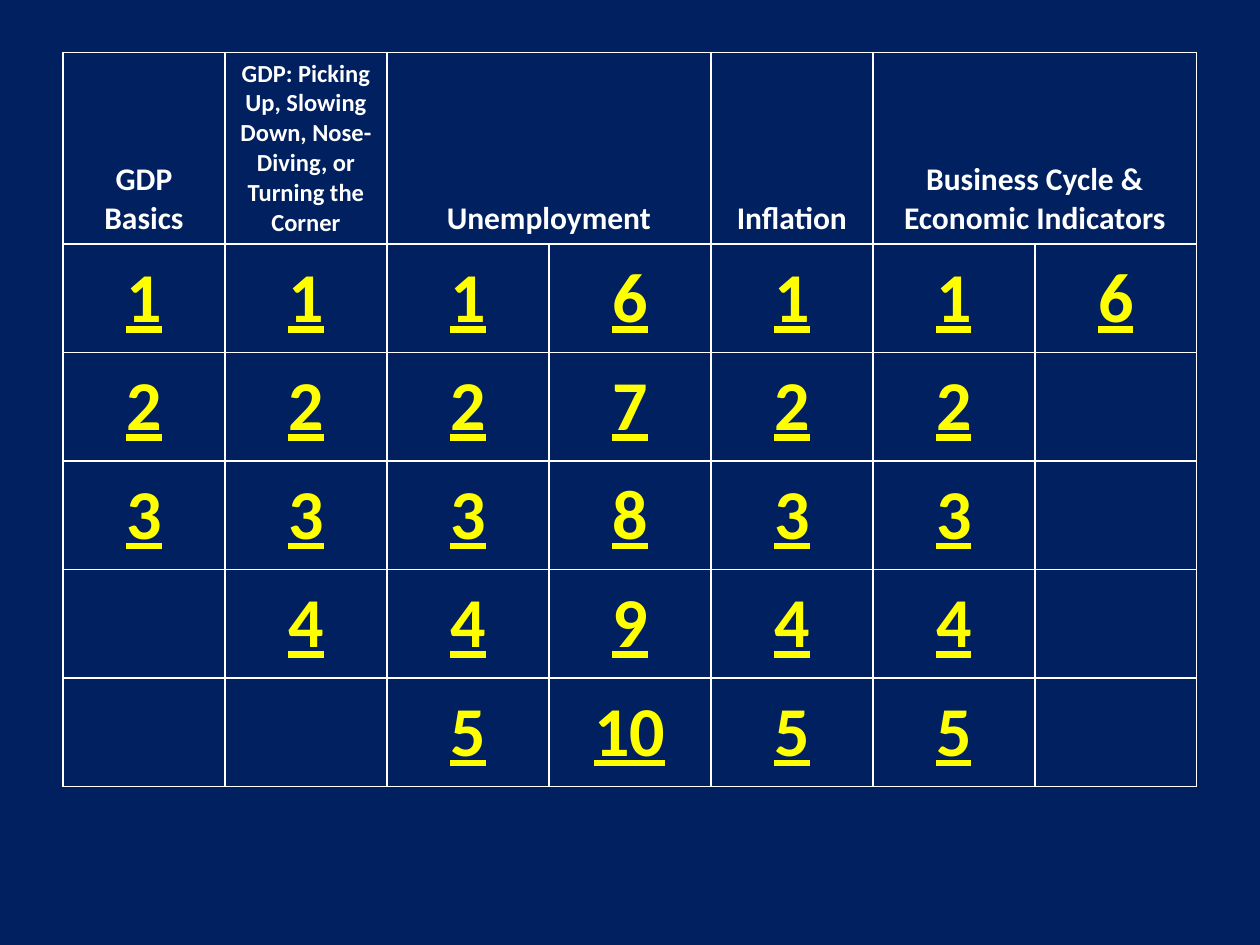
from lxml import etree
from pptx import Presentation
from pptx.dml.color import RGBColor
from pptx.enum import text
from pptx.oxml.ns import qn
from pptx.util import Pt

COLORS = {"navy": "002060", "white": "FFFFFF", "yellow": "FFFF00"}
FONT = "Calibri"

# heading, heading size, question numbers in each of its columns
CATEGORIES = [
    ("GDP Basics", 18, [range(1, 4)]),
    ("GDP: Picking Up, Slowing Down, Nose-Diving, or Turning the Corner", 14,
     [range(1, 5)]),
    ("Unemployment", 18, [range(1, 6), range(6, 11)]),
    ("Inflation", 18, [range(1, 6)]),
    ("Business Cycle & Economic Indicators", 18, [range(1, 6), range(6, 7)]),
]

LEFT, TOP, WIDTH = 36, 30, 648
HEADING_HEIGHT, QUESTION_HEIGHT = 96, 62
QUESTION_ROWS = 5
COLUMNS = sum(len(columns) for _, _, columns in CATEGORIES)


def write(cell, words, size, color, anchor, underline=None):
    cell.vertical_anchor = anchor
    paragraph = cell.text_frame.paragraphs[0]
    paragraph.text = words
    paragraph.alignment = text.PP_ALIGN.CENTER
    font = paragraph.font
    font.name, font.size, font.bold = FONT, Pt(size), True
    font.color.rgb = RGBColor.from_string(COLORS[color])
    if underline:
        paragraph.runs[0].font.underline = True


def outline(cell):
    """Give the cell white borders on all sides and no fill."""
    properties = cell._tc.get_or_add_tcPr()
    for side in ("a:lnL", "a:lnR", "a:lnT", "a:lnB"):
        line = etree.SubElement(properties, qn(side), w=str(Pt(1)))
        fill = etree.SubElement(line, qn("a:solidFill"))
        etree.SubElement(fill, qn("a:srgbClr"), val=COLORS["white"])
    cell.fill.background()


prs = Presentation()
prs.slide_width, prs.slide_height = Pt(720), Pt(540)
slide = prs.slides.add_slide(prs.slide_layouts[6])
slide.background.fill.solid()
slide.background.fill.fore_color.rgb = RGBColor.from_string(COLORS["navy"])

heights = [HEADING_HEIGHT] + [QUESTION_HEIGHT] * QUESTION_ROWS
board = slide.shapes.add_table(len(heights), COLUMNS, Pt(LEFT), Pt(TOP),
                               Pt(WIDTH), Pt(sum(heights))).table
board.first_row = board.horz_banding = False
for row, height in zip(board.rows, heights):
    row.height = Pt(height)
for cell in board.iter_cells():
    outline(cell)

column = 0
for heading, size, question_columns in CATEGORIES:
    top_cell = board.cell(0, column)
    if len(question_columns) > 1:
        top_cell.merge(board.cell(0, column + len(question_columns) - 1))
    write(top_cell, heading, size, "white", text.MSO_ANCHOR.BOTTOM)
    for questions in question_columns:
        for row, number in enumerate(questions, start=1):
            write(board.cell(row, column), str(number), 40, "yellow",
                  text.MSO_ANCHOR.MIDDLE, underline=True)
        column += 1

prs.save("out.pptx")
